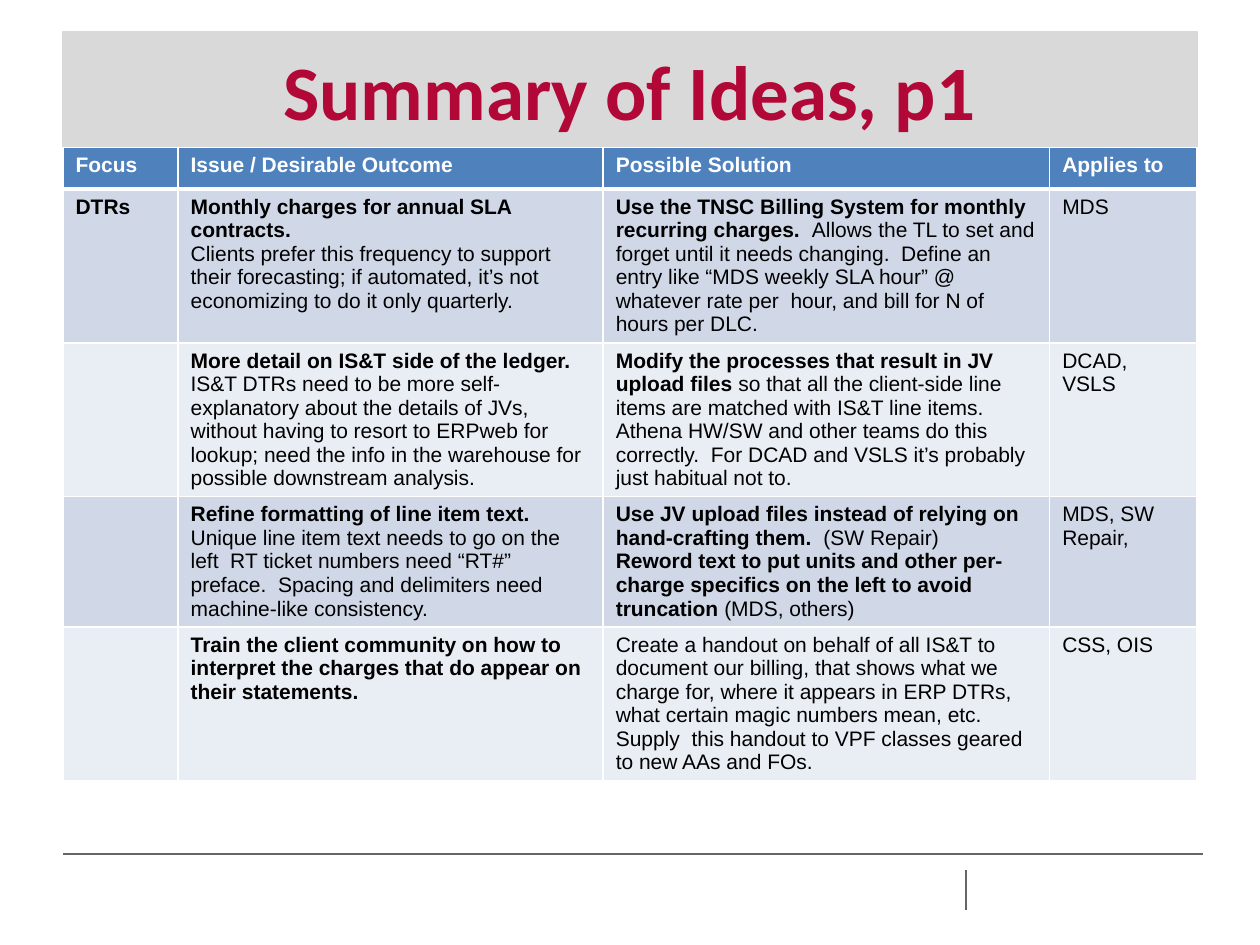
from lxml import etree
from pptx import Presentation
from pptx.dml.color import RGBColor
from pptx.enum.shapes import MSO_CONNECTOR
from pptx.enum.text import MSO_ANCHOR, PP_ALIGN
from pptx.oxml.ns import qn
from pptx.util import Cm, Pt

COLOURS = {
    "title": "B20838", "title_band": "D9D9D9", "rule": "666666",
    "header": "4F81BD", "odd_row": "D0D8E8", "even_row": "E9EDF4",
    "white": "FFFFFF", "black": "000000",
}
TITLE = "Summary of Ideas, p1"

# Each cell is a list of lines; each line is a (bold, plain) pair.
HEADINGS = [[(heading, "")] for heading in
            ("Focus", "Issue / Desirable Outcome", "Possible Solution", "Applies to")]
IDEAS = [
    [
        [("DTRs", "")],
        [("Monthly charges for annual SLA contracts.", ""),
         ("", "Clients prefer this frequency to support their forecasting; if automated, "
              "it’s not economizing to do it only quarterly.")],
        [("Use the TNSC Billing System for monthly recurring charges.  ",
          "Allows the TL to set and forget until it needs changing.  Define an entry like "
          "“MDS weekly SLA hour” @ whatever rate per  hour, and bill for N of hours per DLC.")],
        [("", "MDS")],
    ],
    [
        [],
        [("More detail on IS&T side of the ledger. ",
          "IS&T DTRs need to be more self-explanatory about the details of JVs, without "
          "having to resort to ERPweb for lookup; need the info in the warehouse for "
          "possible downstream analysis.")],
        [("Modify the processes that result in JV upload files",
          " so that all the client-side line items are matched with IS&T line items.  "
          "Athena HW/SW and other teams do this correctly.  For DCAD and VSLS it’s "
          "probably just habitual not to.")],
        [("", "DCAD, VSLS")],
    ],
    [
        [],
        [("Refine formatting of line item text.  ",
          "Unique line item text needs to go on the left  RT ticket numbers need “RT#” "
          "preface.  Spacing and delimiters need machine-like consistency.")],
        [("Use JV upload files instead of relying on hand-crafting them. ", " (SW Repair)"),
         ("Reword text to put units and other per-charge specifics on the left to avoid "
          "truncation ", "(MDS, others)")],
        [("", "MDS, SW Repair,")],
    ],
    [
        [],
        [("Train the client community on how to interpret the charges that do appear on "
          "their statements.", "")],
        [("", "Create a handout on behalf of all IS&T to document our billing, that shows "
              "what we charge for, where it appears in ERP DTRs, what certain magic numbers "
              "mean, etc.  Supply  this handout to VPF classes geared to new AAs and FOs.")],
        [("", "CSS, OIS")],
    ],
]

LEFT, WIDTH = Cm(1.27), Cm(22.86)
TITLE_TOP, TITLE_HEIGHT = Cm(0.64), Cm(2.33)
COLUMN_WIDTHS = (2.32, 8.57, 9.0, 2.97)
ROW_HEIGHTS = (0.84, 3.1, 3.1, 2.62, 3.1)
RULES = [((1.27, 17.22), (24.26, 17.22)), ((19.48, 18.34), (19.48, 17.53))]


def rgb(name):
    return RGBColor.from_string(COLOURS[name])


def add_rule(slide, start, end):
    rule = slide.shapes.add_connector(
        MSO_CONNECTOR.STRAIGHT, *(Cm(value) for value in start + end))
    rule.line.color.rgb = rgb("rule")
    rule.line.width = Pt(1)
    etree.SubElement(rule._element.spPr, qn("a:effectLst"))


def add_title(slide):
    title = slide.shapes.title
    title.left, title.top, title.width, title.height = LEFT, TITLE_TOP, WIDTH, TITLE_HEIGHT
    title.fill.solid()
    title.fill.fore_color.rgb = rgb("title_band")
    title.line.color.rgb = rgb("title_band")
    title.line.width = Pt(0.75)
    title.text_frame.text = TITLE
    title.text_frame.vertical_anchor = MSO_ANCHOR.MIDDLE
    heading = title.text_frame.paragraphs[0]
    heading.alignment = PP_ALIGN.CENTER
    heading.font.name = "Calibri"
    heading.font.size = Pt(44)
    heading.font.bold = True
    heading.font.color.rgb = rgb("title")


def add_borders(cell, top, bottom):
    """Draw white cell borders; top and bottom are widths in points."""
    properties = cell._tc.get_or_add_tcPr()
    for side, points in (("L", 1), ("R", 1), ("T", top), ("B", bottom)):
        border = etree.SubElement(properties, qn(f"a:ln{side}"), w=str(Pt(points)))
        fill = etree.SubElement(border, qn("a:solidFill"))
        etree.SubElement(fill, qn("a:srgbClr"), val=COLOURS["white"])


def fill_cell(cell, lines, fill, ink):
    cell.fill.solid()
    cell.fill.fore_color.rgb = rgb(fill)
    paragraph = cell.text_frame.paragraphs[0]
    paragraph.font.name = "Arial"
    paragraph.font.size = Pt(12)
    paragraph.font.color.rgb = rgb(ink)
    for number, line in enumerate(lines):
        if number:
            paragraph.add_line_break()
        for text, bold in zip(line, (True, False)):
            if text:
                run = paragraph.add_run()
                run.text = text
                run.font.bold = bold


def add_ideas_table(slide):
    rows = [HEADINGS] + IDEAS
    table = slide.shapes.add_table(
        len(rows), len(HEADINGS), LEFT, TITLE_TOP + TITLE_HEIGHT,
        WIDTH, Cm(sum(ROW_HEIGHTS))).table
    for column, width in zip(table.columns, COLUMN_WIDTHS):
        column.width = Cm(width)
    for row, height in zip(table.rows, ROW_HEIGHTS):
        row.height = Cm(height)
    for r, row in enumerate(rows):
        fill = "header" if r == 0 else "odd_row" if r % 2 else "even_row"
        for c, lines in enumerate(row):
            cell = table.cell(r, c)
            add_borders(cell, top=3 if r == 1 else 1, bottom=3 if r == 0 else 1)
            fill_cell(cell, lines, fill, "white" if r == 0 else "black")


def main():
    presentation = Presentation()
    presentation.slide_width, presentation.slide_height = Cm(25.4), Cm(19.05)
    slide = presentation.slides.add_slide(presentation.slide_layouts[5])
    for start, end in RULES:
        add_rule(slide, start, end)
    add_title(slide)
    add_ideas_table(slide)
    presentation.save("out.pptx")


if __name__ == "__main__":
    main()
